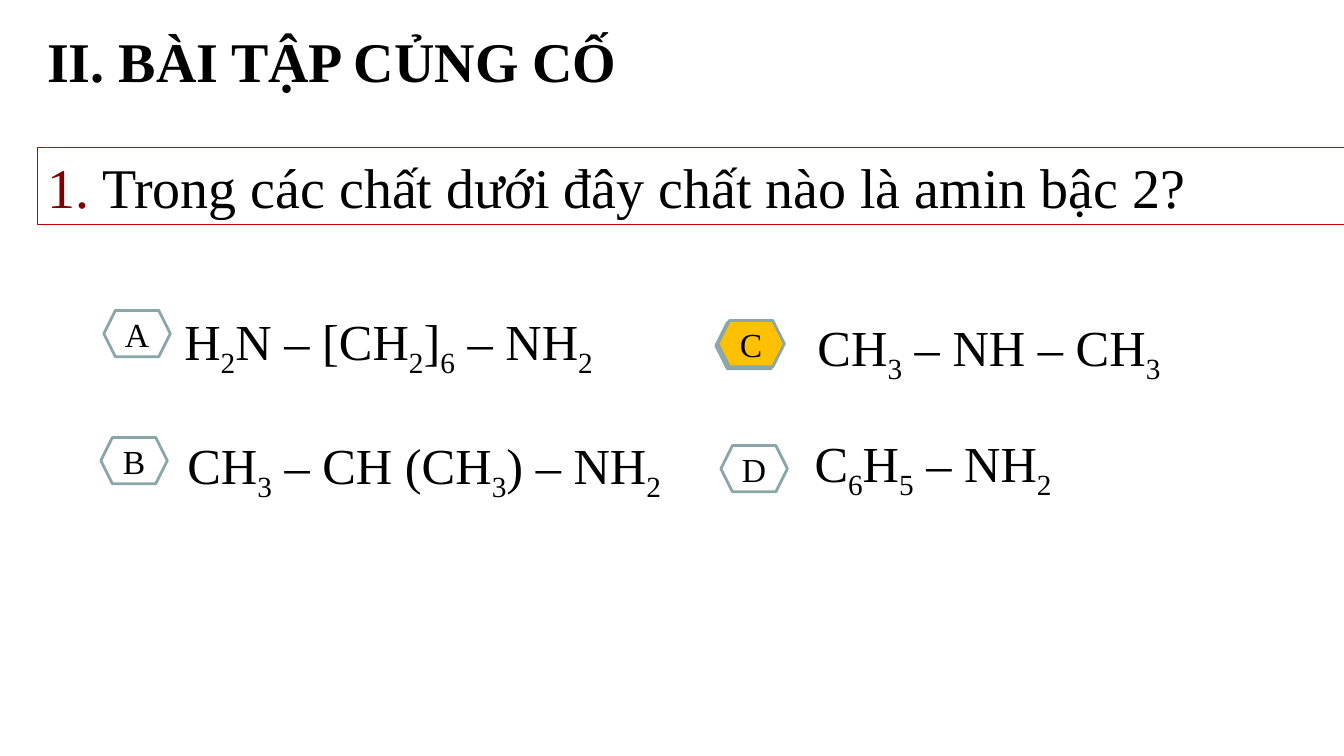
from pptx import Presentation
from pptx.dml.color import RGBColor
from pptx.enum.shapes import MSO_SHAPE as Preset
from pptx.enum.text import MSO_ANCHOR as Anchor, MSO_AUTO_SIZE as AutoSize, PP_ALIGN as Align
from pptx.util import Inches, Pt

FONT = "Times New Roman"
BLACK, WHITE, GOLD, SLATE = "000000", "FFFFFF", "FFC000", "8AA6A8"
RED, MAROON = "C00000", "800000"
BADGE_SIZE = (0.66, 0.46)

ANSWERS = [
    ("A", (1.03, 3.08), (1.73, 3.03, 4.49, 0.71), "H _2 N – [CH _2 ] _6  – NH _2"),
    ("B", (1, 4.34), (1.76, 4.26, 5.57, 0.71), "CH _3  – CH (CH _3 ) – NH _2"),
    ("C", (7.12, 3.18), (8.01, 3.09, 4.47, 0.71), "CH _3  – NH – CH _3"),
    ("D", (7.98 - 0.83, 4.42), (7.98, 4.24, 4.32, 0.71), "C _6 H _5  – NH _2"),
]
FORMULAS = {
    "A": ["H", "2", "N – [CH", "2", "]", "6", " – NH", "2"],
    "B": ["CH", "3", " – CH (CH", "3", ") – NH", "2"],
    "C": ["CH", "3", " – NH – CH", "3"],
    "D": ["C", "6", "H", "5", " – NH", "2"],
}
ANSWERS = [(letter, spot, box, FORMULAS[letter]) for letter, spot, box, _ in ANSWERS]


def color(value):
    """Turn a hex string into a colour."""
    return RGBColor.from_string(value)


def add_span(para, text, size, ink=BLACK, bold=False, subscript=False):
    """Append one formatted run to a paragraph."""
    span = para.add_run()
    span.text = text
    font = span.font
    font.name, font.size, font.bold = FONT, Pt(size), bold
    font.color.rgb = color(ink)
    if subscript:
        font._element.set("baseline", "-25000")


def add_text_box(page, box, wrap=True):
    """Add a text box and return its first paragraph."""
    frame = page.shapes.add_textbox(*map(Inches, box)).text_frame
    frame.word_wrap = wrap
    frame.auto_size = AutoSize.SHAPE_TO_FIT_TEXT
    return frame.paragraphs[0]


def add_outlined(page, preset, box, line, width, fill=None):
    """Add a preset shape with an outline and an optional fill."""
    shape = page.shapes.add_shape(preset, *map(Inches, box))
    shape.shadow.inherit = False
    shape.line.color.rgb = color(line)
    shape.line.width = Pt(width)
    if fill:
        shape.fill.solid()
        shape.fill.fore_color.rgb = color(fill)
    else:
        shape.fill.background()
    return shape


def add_title(page, box):
    """Place the section heading."""
    para = add_text_box(page, box, wrap=False)
    add_span(para, "II. BÀI TẬP CỦNG CỐ", 40, bold=True)


def add_question(page, box):
    """Place the framed question."""
    frame = add_outlined(page, Preset.RECTANGLE, box, RED, 0.75).text_frame
    frame.word_wrap = True
    frame.auto_size = AutoSize.SHAPE_TO_FIT_TEXT
    frame.vertical_anchor = Anchor.TOP
    para = frame.paragraphs[0]
    para.alignment = Align.LEFT
    add_span(para, "1.", 40, MAROON)
    add_span(para, " Trong các chất dưới đây chất nào là amin bậc 2?", 40)


def add_badge(page, spot, fill, letter=""):
    """Place a hexagon, with its answer letter if given."""
    badge = add_outlined(page, Preset.HEXAGON, (*spot, *BADGE_SIZE), SLATE, 2, fill)
    if letter:
        frame = badge.text_frame
        frame.word_wrap = False
        frame.vertical_anchor = Anchor.MIDDLE
        para = frame.paragraphs[0]
        para.alignment = Align.CENTER
        add_span(para, letter, 24)


def add_answer(page, letter, spot, box, formula, correct):
    """Place one answer: its badge and its chemical formula."""
    if correct:
        left, top = spot
        add_badge(page, (left - 0.02, top + 0.02), WHITE)
    add_badge(page, spot, GOLD if correct else WHITE, letter)
    para = add_text_box(page, box)
    for index, part in enumerate(formula):
        add_span(para, part, 36, subscript=index % 2 == 1)


def main():
    """Build the quiz slide."""
    deck = Presentation()
    deck.slide_width, deck.slide_height = Inches(13.33), Inches(7.5)
    page = deck.slides.add_slide(deck.slide_layouts[6])
    add_title(page, (0.37, 0.21, 5.91, 0.77))
    add_question(page, (0.37, 1.46, 12.97, 0.77))
    for letter, spot, box, formula in ANSWERS:
        add_answer(page, letter, spot, box, formula, correct=letter == "C")
    deck.save("out.pptx")


if __name__ == "__main__":
    main()
